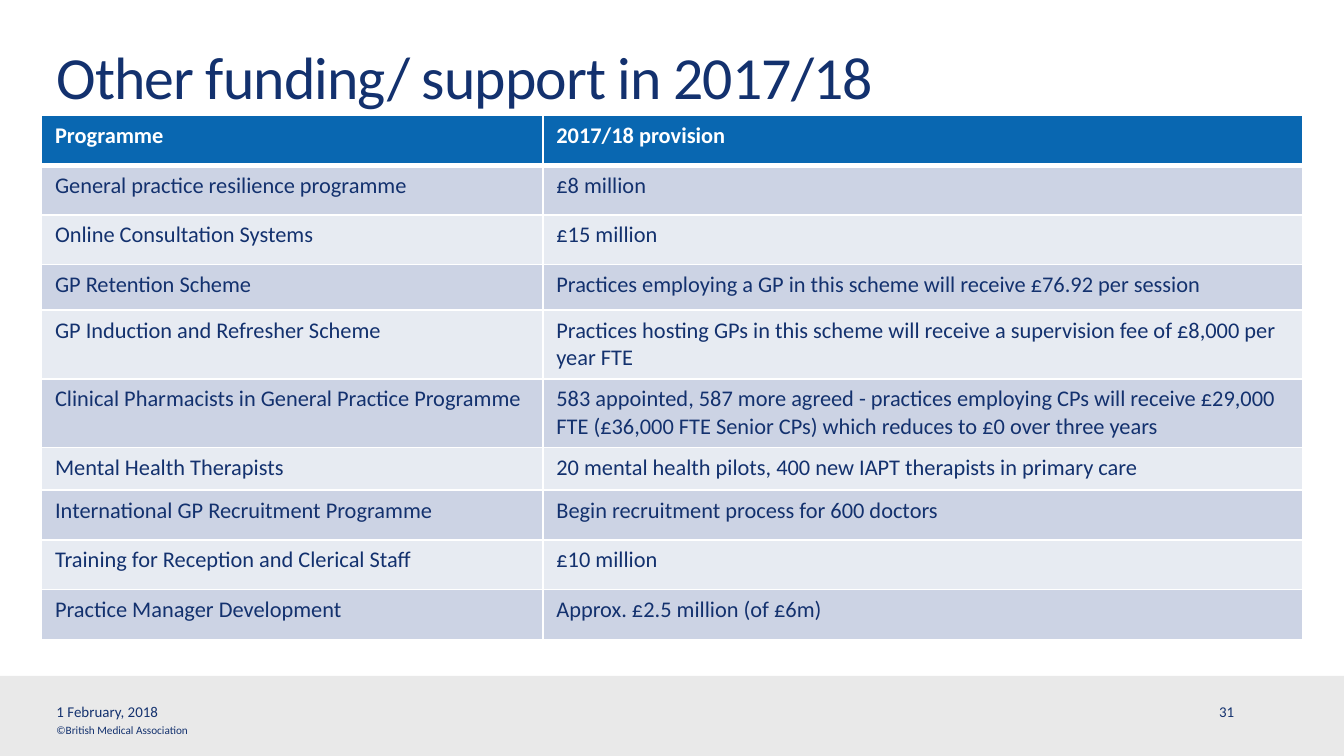
"""Builds a slide tabulating other funding and support for general practice in 2017/18."""
from dataclasses import dataclass

from lxml import etree
from pptx import Presentation
from pptx import util as u
from pptx.dml.color import RGBColor
from pptx.enum import shapes, text
from pptx.oxml.ns import qn

TITLE = "Other funding/ support in 2017/18"
PROGRAMMES = [
    ("Programme", "2017/18 provision"),
    ("General practice resilience programme", "£8 million"),
    ("Online Consultation Systems", "£15 million"),
    ("GP Retention Scheme", "Practices employing a GP in this scheme will receive £76.92 per session"),
    ("GP Induction and Refresher Scheme",
     "Practices hosting GPs in this scheme will receive a supervision fee of £8,000 per year FTE"),
    ("Clinical Pharmacists in General Practice Programme",
     "583 appointed, 587 more agreed - practices employing CPs will receive £29,000 FTE "
     "(£36,000 FTE Senior CPs) which reduces to £0 over three years"),
    ("Mental Health Therapists", "20 mental health pilots, 400 new IAPT therapists in primary care"),
    ("International GP Recruitment Programme", "Begin recruitment process for 600 doctors"),
    ("Training for Reception and Clerical Staff", "£10 million"),
    ("Practice Manager Development", "Approx. £2.5 million (of £6m)"),
]
WIDTH = 10
HEIGHT = WIDTH * 9 / 16
MARGIN = 0.42
FOOTER_TOP = 5.03
COLUMNS = (3.73, 5.65)
ROW, ROW_HEIGHTS = 0.37, {3: 0.34, 4: 0.51, 5: 0.51, 6: 0.32}


@dataclass(frozen=True)
class Theme:
    font: str = "Calibri"
    navy: str = "13316E"
    white: str = "FFFFFF"
    header: str = "0967B1"
    bands: tuple = ("E7EBF2", "CCD3E4")
    footer: str = "E9E9E9"
    title_size: int = 32
    table_size: int = 12
    footer_size: int = 8
    copyright_size: int = 6


THEME = Theme()
FOOTERS = [
    ("©British Medical Association", (MARGIN, 5.38, 2.07, 0.1), THEME.copyright_size),
    ("1 February, 2018", (MARGIN, 5.23, 3.17, 0.13), THEME.footer_size),
    ("31", (9.07, 5.23, 0.28, 0.13), THEME.footer_size),
]


def inches(box):
    return [u.Inches(length) for length in box]


def paint(fill, colour):
    fill.solid()
    fill.fore_color.rgb = RGBColor.from_string(colour)


def write(frame, words, size, colour=THEME.navy, bold=False):
    frame.text = words
    font = frame.paragraphs[0].runs[0].font
    font.name, font.size, font.bold = THEME.font, u.Pt(size), bold
    font.color.rgb = RGBColor.from_string(colour)


def clear_margins(frame):
    frame.margin_left = frame.margin_right = frame.margin_top = frame.margin_bottom = 0
    frame.word_wrap = True


def add_borders(cell, bottom):
    properties = cell._tc.get_or_add_tcPr()
    for side, points in (("L", 1), ("R", 1), ("T", 1), ("B", bottom)):
        line = etree.SubElement(properties, qn(f"a:ln{side}"), w=str(u.Pt(points)))
        solid = etree.SubElement(line, qn("a:solidFill"))
        etree.SubElement(solid, qn("a:srgbClr"), val=THEME.white)


def add_title(slide):
    title = slide.shapes.title
    title.left, title.top, title.width, title.height = inches((MARGIN, 0.36, 7.73, 0.54))
    frame = title.text_frame
    clear_margins(frame)
    frame.auto_size = text.MSO_AUTO_SIZE.NONE
    frame.vertical_anchor = text.MSO_ANCHOR.TOP
    write(frame, TITLE, THEME.title_size)
    heading = frame.paragraphs[0]
    heading.alignment = text.PP_ALIGN.LEFT
    heading.line_spacing = u.Pt(34)
    heading.runs[0]._r.get_or_add_rPr().set("spc", "-50")


def add_footer(slide):
    band = slide.shapes.add_shape(
        shapes.MSO_SHAPE.RECTANGLE, *inches((0, FOOTER_TOP, WIDTH, HEIGHT - FOOTER_TOP)))
    band.shadow.inherit = False
    paint(band.fill, THEME.footer)
    band.line.fill.background()
    for words, box, size in FOOTERS:
        frame = slide.shapes.add_textbox(*inches(box)).text_frame
        clear_margins(frame)
        frame.vertical_anchor = text.MSO_ANCHOR.MIDDLE
        write(frame, words, size)


def add_programmes(slide):
    heights = [ROW_HEIGHTS.get(row, ROW) for row in range(len(PROGRAMMES))]
    table = slide.shapes.add_table(
        len(PROGRAMMES), len(COLUMNS), *inches((0.31, 0.86, sum(COLUMNS), sum(heights)))).table
    for column, width in zip(table.columns, COLUMNS):
        column.width = u.Inches(width)
    for row, (entries, height) in enumerate(zip(PROGRAMMES, heights)):
        table.rows[row].height = u.Inches(height)
        heading = row == 0
        for column, words in enumerate(entries):
            cell = table.cell(row, column)
            add_borders(cell, bottom=3 if heading else 1)
            paint(cell.fill, THEME.header if heading else THEME.bands[row % 2])
            write(cell.text_frame, words, THEME.table_size,
                  THEME.white if heading else THEME.navy, heading)


def main():
    deck = Presentation()
    deck.slide_width, deck.slide_height = inches((WIDTH, HEIGHT))
    slide = deck.slides.add_slide(deck.slide_layouts[5])
    paint(slide.background.fill, THEME.white)
    add_footer(slide)
    add_title(slide)
    add_programmes(slide)
    deck.save("out.pptx")


if __name__ == "__main__":
    main()
